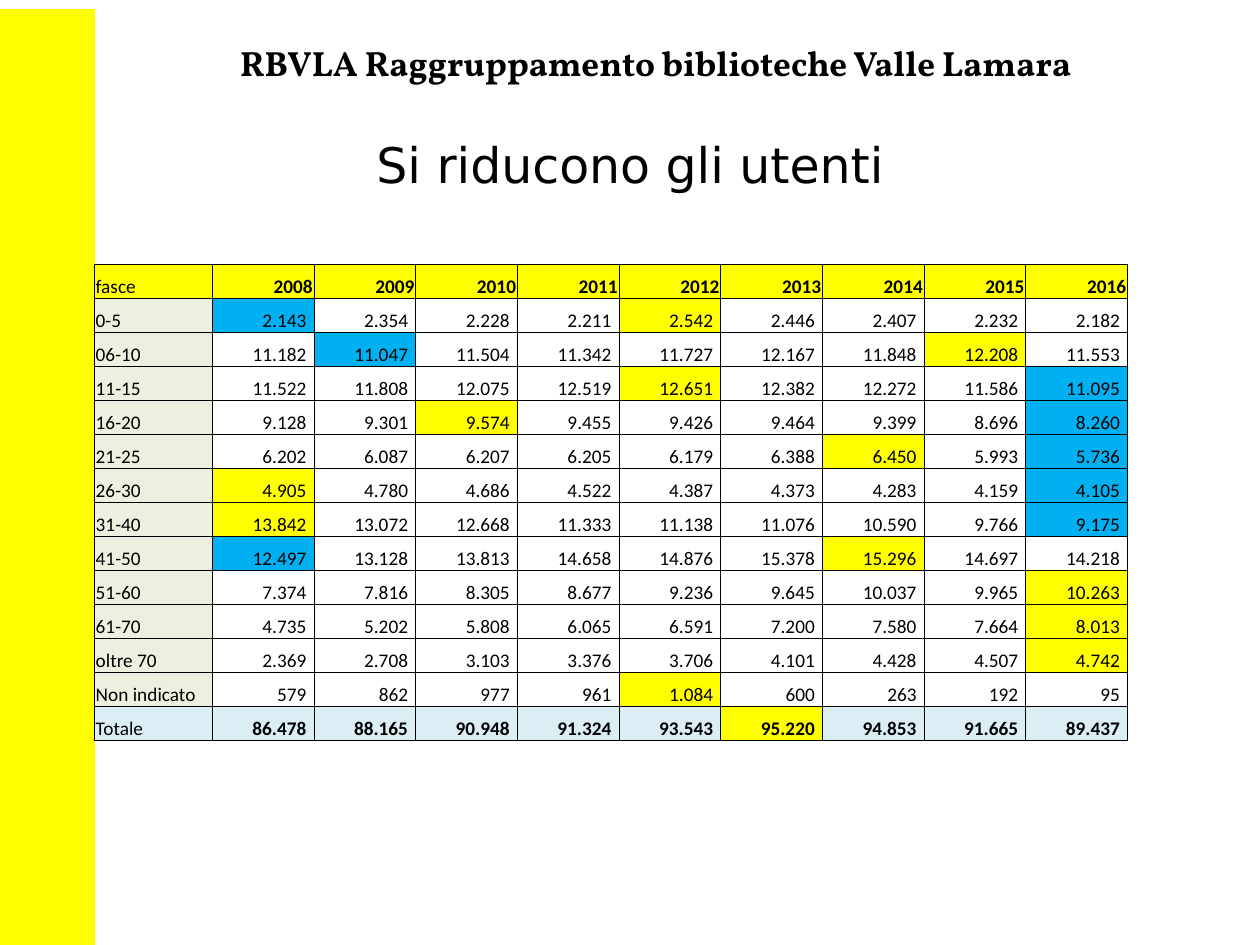
from dataclasses import dataclass

from lxml import etree
from pptx import Presentation
from pptx import util as u
from pptx.dml.color import RGBColor
from pptx.enum import shapes, text
from pptx.oxml.ns import qn


@dataclass(frozen=True)
class Theme:
    ink: str = "000000"
    yellow: str = "FFFF00"
    blue: str = "00B0F0"
    band: str = "EBF1DE"
    total: str = "DAEEF3"
    header_font: str = "Vollkorn"
    title_font: str = "DejaVu Sans"
    table_font: str = "Calibri"
    header_size: int = 20
    title_size: int = 28
    table_size: int = 11


THEME = Theme()
WIDTH, HEIGHT = u.Inches(10), u.Inches(7.5)
YEARS = list(range(2008, 2017))

# age group, users per year, year marked yellow, year marked blue
GROUPS = [
    ("0-5", "2.143 2.354 2.228 2.211 2.542 2.446 2.407 2.232 2.182", 2012, 2008),
    ("06-10", "11.182 11.047 11.504 11.342 11.727 12.167 11.848 12.208 11.553", 2015, 2009),
    ("11-15", "11.522 11.808 12.075 12.519 12.651 12.382 12.272 11.586 11.095", 2012, 2016),
    ("16-20", "9.128 9.301 9.574 9.455 9.426 9.464 9.399 8.696 8.260", 2010, 2016),
    ("21-25", "6.202 6.087 6.207 6.205 6.179 6.388 6.450 5.993 5.736", 2014, 2016),
    ("26-30", "4.905 4.780 4.686 4.522 4.387 4.373 4.283 4.159 4.105", 2008, 2016),
    ("31-40", "13.842 13.072 12.668 11.333 11.138 11.076 10.590 9.766 9.175", 2008, 2016),
    ("41-50", "12.497 13.128 13.813 14.658 14.876 15.378 15.296 14.697 14.218", 2014, 2008),
    ("51-60", "7.374 7.816 8.305 8.677 9.236 9.645 10.037 9.965 10.263", 2016, None),
    ("61-70", "4.735 5.202 5.808 6.065 6.591 7.200 7.580 7.664 8.013", 2016, None),
    ("oltre 70", "2.369 2.708 3.103 3.376 3.706 4.101 4.428 4.507 4.742", 2016, None),
    ("Non indicato", "579 862 977 961 1.084 600 263 192 95", 2012, None),
    ("Totale", "86.478 88.165 90.948 91.324 93.543 95.220 94.853 91.665 89.437", 2013, None),
]


def box(left, top, width, height):
    """Turn shares of the slide into lengths."""
    return (int(left * WIDTH), int(top * HEIGHT), int(width * WIDTH), int(height * HEIGHT))


def style(paragraph, font, size, bold=False, align=text.PP_ALIGN.CENTER):
    paragraph.alignment = align
    paragraph.font.name = font
    paragraph.font.size = u.Pt(size)
    paragraph.font.bold = bold
    paragraph.font.color.rgb = RGBColor.from_string(THEME.ink)


def add_side_band(slide, area):
    band = slide.shapes.add_shape(shapes.MSO_SHAPE.RECTANGLE, *area)
    band.shadow.inherit = False
    band.fill.solid()
    band.fill.fore_color.rgb = RGBColor.from_string(THEME.yellow)
    band.line.color.rgb = RGBColor.from_string(THEME.yellow)
    band.line.width = u.Pt(0.75)


def add_header(slide, area, words):
    frame = slide.shapes.add_textbox(*area).text_frame
    frame.word_wrap = True
    frame.vertical_anchor = text.MSO_ANCHOR.MIDDLE
    frame.text = words
    style(frame.paragraphs[0], THEME.header_font, THEME.header_size, bold=True)


def place_title(slide, area, words):
    title = slide.shapes.title
    title.left, title.top, title.width, title.height = area
    title.text_frame.text = words
    title.text_frame.vertical_anchor = text.MSO_ANCHOR.MIDDLE
    style(title.text_frame.paragraphs[0], THEME.title_font, THEME.title_size)


def add_borders(cell):
    properties = cell._tc.get_or_add_tcPr()
    for side in ("a:lnL", "a:lnR", "a:lnT", "a:lnB"):
        line = etree.SubElement(properties, qn(side), w=str(u.Pt(0.5)))
        fill = etree.SubElement(line, qn("a:solidFill"))
        etree.SubElement(fill, qn("a:srgbClr"), val=THEME.ink)


def fill_cell(cell, words, fill=None, bold=False, align=text.PP_ALIGN.RIGHT, right=0.01):
    add_borders(cell)
    cell.margin_left = cell.margin_top = u.Inches(0.01)
    cell.margin_right, cell.margin_bottom = u.Inches(right), 0
    cell.vertical_anchor = text.MSO_ANCHOR.BOTTOM
    cell.text = words
    style(cell.text_frame.paragraphs[0], THEME.table_font, THEME.table_size, bold, align)
    if fill:
        cell.fill.solid()
        cell.fill.fore_color.rgb = RGBColor.from_string(fill)
    else:
        cell.fill.background()


def add_user_table(slide, area):
    left, top, width, height = area
    table = slide.shapes.add_table(len(GROUPS) + 1, len(YEARS) + 1, *area).table
    table.first_row = table.horz_banding = False
    label_width = int(width * 0.114)
    for index, column in enumerate(table.columns):
        column.width = (width - label_width) // len(YEARS) if index else label_width
    for row in table.rows:
        row.height = height // len(table.rows)

    fill_cell(table.cell(0, 0), "fasce", THEME.yellow, align=text.PP_ALIGN.LEFT)
    for column, year in enumerate(YEARS, 1):
        fill_cell(table.cell(0, column), str(year), THEME.yellow, bold=True)

    for row, (group, users, yellow_year, blue_year) in enumerate(GROUPS, 1):
        is_total = group == "Totale"
        fill_cell(table.cell(row, 0), group, THEME.total if is_total else THEME.band,
                  align=text.PP_ALIGN.LEFT)
        marks = {yellow_year: THEME.yellow, blue_year: THEME.blue}
        for column, (year, count) in enumerate(zip(YEARS, users.split()), 1):
            fill = marks.get(year, THEME.total if is_total else None)
            fill_cell(table.cell(row, column), count, fill, bold=is_total, right=0.06)


def main():
    deck = Presentation()
    deck.slide_width, deck.slide_height = WIDTH, HEIGHT
    slide = deck.slides.add_slide(deck.slide_layouts[5])
    add_side_band(slide, box(0, 0.01, 0.075, 0.99))
    add_header(slide, box(0.133, 0.037, 0.775, 0.058),
               "RBVLA Raggruppamento biblioteche Valle Lamara")
    place_title(slide, box(0.075, 0.09, 0.85, 0.167), "Si riducono gli utenti")
    add_user_table(slide, box(0.075, 0.28, 0.82, 0.504))
    deck.save("out.pptx")


if __name__ == "__main__":
    main()
